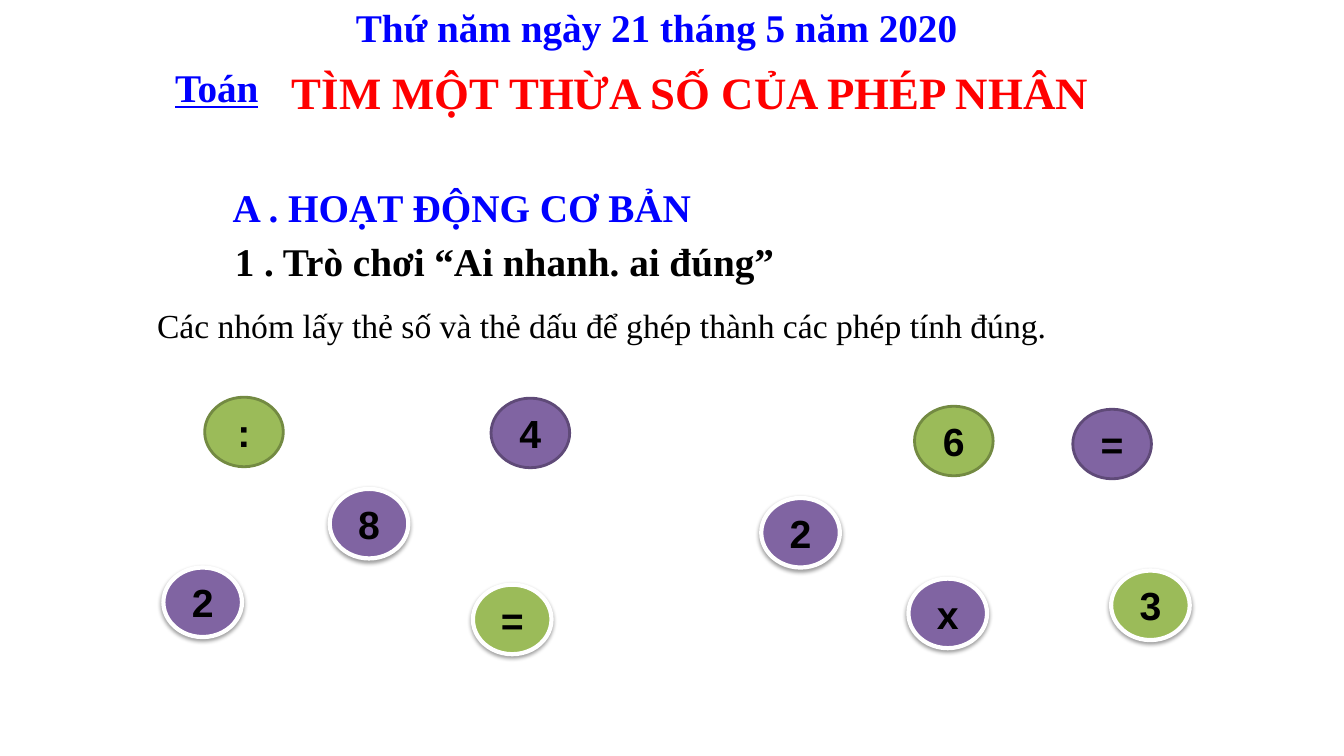
from lxml import etree
from pptx import Presentation
from pptx.dml.color import RGBColor
from pptx.enum.shapes import MSO_SHAPE
from pptx.enum.text import MSO_ANCHOR, PP_ALIGN
from pptx.oxml import parse_xml
from pptx.oxml.ns import nsdecls
from pptx.util import Pt

OVAL = MSO_SHAPE.OVAL
MIDDLE = MSO_ANCHOR.MIDDLE
LEFT, CENTER = PP_ALIGN.LEFT, PP_ALIGN.CENTER

BLUE = RGBColor(0x00, 0x00, 0xFF)
RED = RGBColor(0xFF, 0x00, 0x00)
BLACK = RGBColor(0x00, 0x00, 0x00)
WHITE = RGBColor(0xFF, 0xFF, 0xFF)
PURPLE = RGBColor(0x80, 0x64, 0xA2)
DARK_PURPLE = RGBColor(0x5F, 0x4A, 0x78)
GREEN = RGBColor(0x9B, 0xBB, 0x59)
DARK_GREEN = RGBColor(0x73, 0x8A, 0x42)

PX = 9144
CARD_WIDTH, CARD_HEIGHT = 78, 69
SHADOW = f"""<a:effectLst {nsdecls("a")}>
<a:outerShdw blurRad="{Pt(3.1)}" dist="{Pt(1.6)}" dir="5400000" rotWithShape="0">
<a:srgbClr val="000000"><a:alpha val="38000"/></a:srgbClr>
</a:outerShdw></a:effectLst>"""


def write(shape, text, font, size, color, bold, align):
    para = shape.text_frame.paragraphs[0]
    para.text = text
    para.alignment = align
    span = para.runs[0]
    span.font.name = font
    span.font.size = Pt(size)
    span.font.bold = bold
    span.font.color.rgb = color
    return span


deck = Presentation()
deck.slide_width, deck.slide_height = 1333 * PX, 750 * PX
page = deck.slides.add_slide(deck.slide_layouts[6])

headings = [
    ("Thứ năm ngày 21 tháng 5 năm 2020 ", 331, -2, 650, 57, 28, BLUE, True, CENTER),
    ("Toán", 86, 58, 258, 57, 28, BLUE, True, CENTER),
    ("TÌM MỘT THỪA SỐ CỦA PHÉP NHÂN", 267, 59, 835, 64, 32, RED, True, CENTER),
    ("A . HOẠT ĐỘNG CƠ BẢN", 221, 177, 867, 57, 28, BLUE, True, LEFT),
    ("1 . Trò chơi “Ai nhanh. ai đúng”", 223, 231, 611, 57, 28, BLACK, True, LEFT),
    ("Các nhóm lấy thẻ số và thẻ dấu để ghép thành các phép tính đúng.",
     146, 298, 1023, 50, 24, BLACK, False, LEFT),
]
for text, left, top, width, height, size, color, bold, align in headings:
    box = page.shapes.add_textbox(left * PX, top * PX, width * PX, height * PX)
    box.text_frame.word_wrap = True
    span = write(box, text, "Times New Roman", size, color, bold, align)
    span.font.underline = True if text == "Toán" else None

cards = [
    ("4", 487, 395, PURPLE, DARK_PURPLE),
    ("=", 469, 580, GREEN, WHITE),
    ("8", 327, 485, PURPLE, WHITE),
    ("2", 162, 563, PURPLE, WHITE),
    (":", 203, 394, GREEN, DARK_GREEN),
    ("=", 1064, 406, PURPLE, DARK_PURPLE),
    ("3", 1102, 566, GREEN, WHITE),
    ("x", 901, 574, PURPLE, WHITE),
    ("2", 755, 494, PURPLE, WHITE),
    ("6", 907, 403, GREEN, DARK_GREEN),
]
for text, left, top, fill, outline in cards:
    card = page.shapes.add_shape(OVAL, left * PX, top * PX, CARD_WIDTH * PX, CARD_HEIGHT * PX)
    card.fill.solid()
    card.fill.fore_color.rgb = fill
    card.line.color.rgb = outline
    card.line.width = Pt(3 if outline == WHITE else 2)
    card.shadow.inherit = False
    if outline == WHITE:
        effects = card.element.spPr.find("{*}effectLst")
        effects.getparent().replace(effects, parse_xml(SHADOW))
    card.text_frame.word_wrap = False
    card.text_frame.vertical_anchor = MIDDLE
    write(card, text, "Arial", 28, BLACK, True, CENTER)

deck.save("out.pptx")
